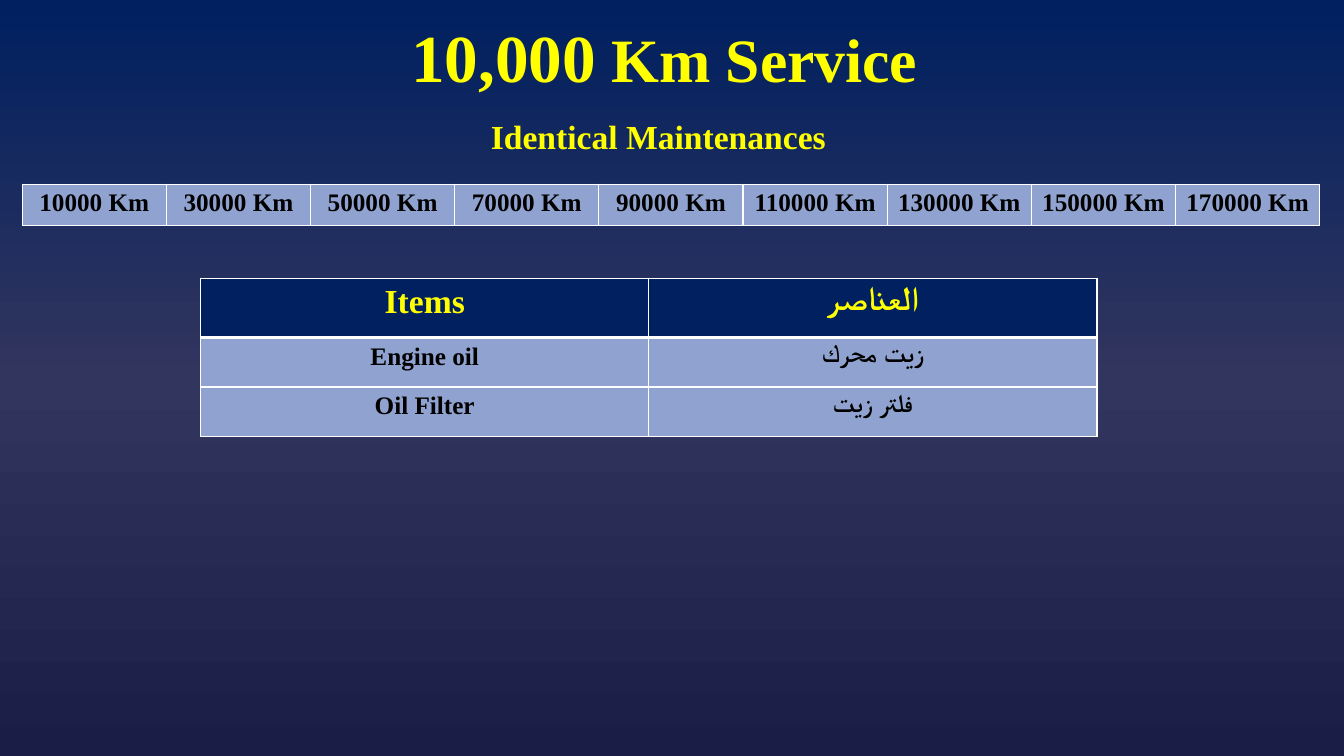
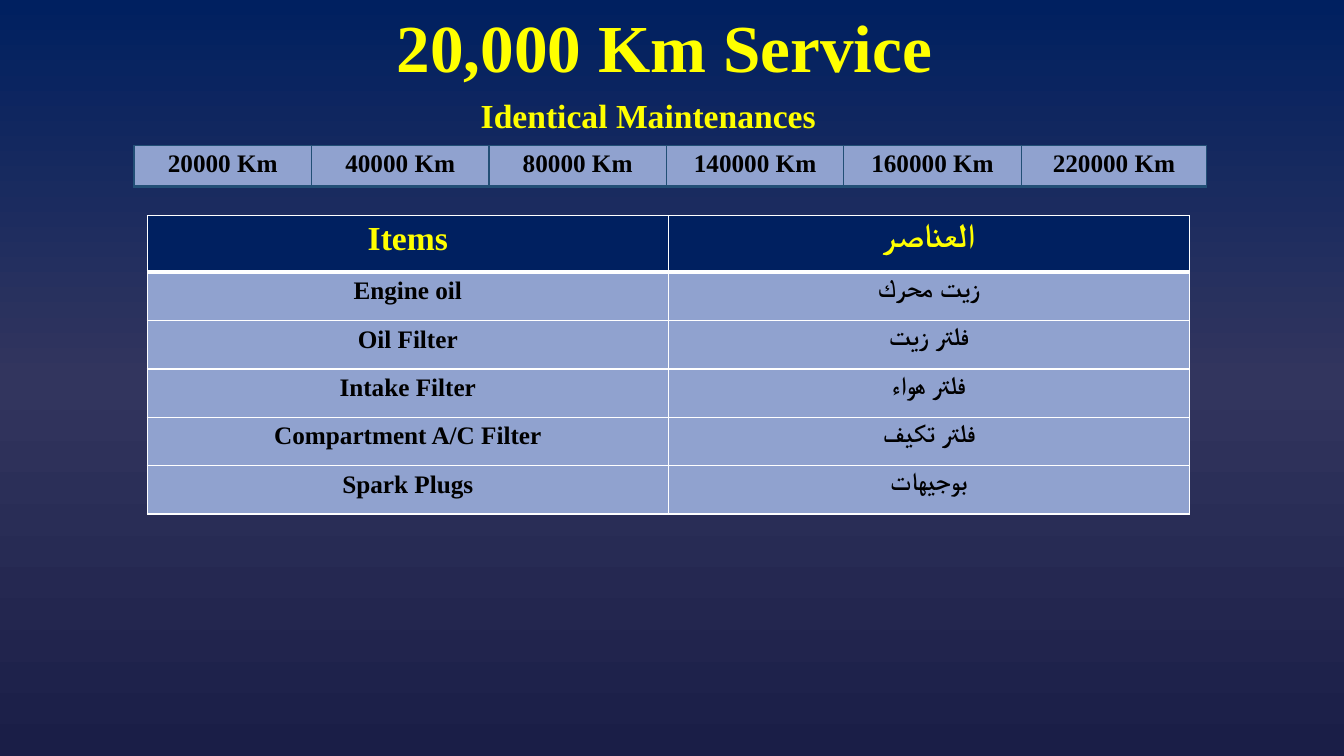
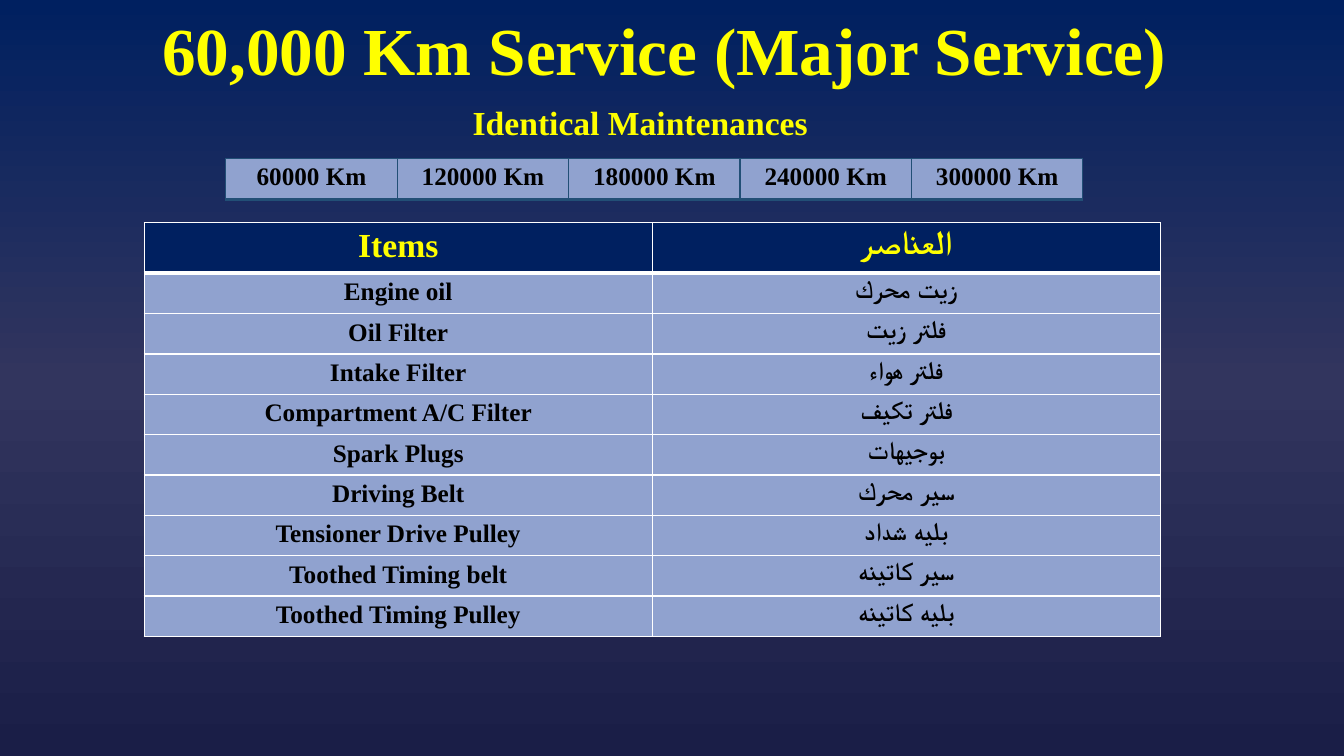
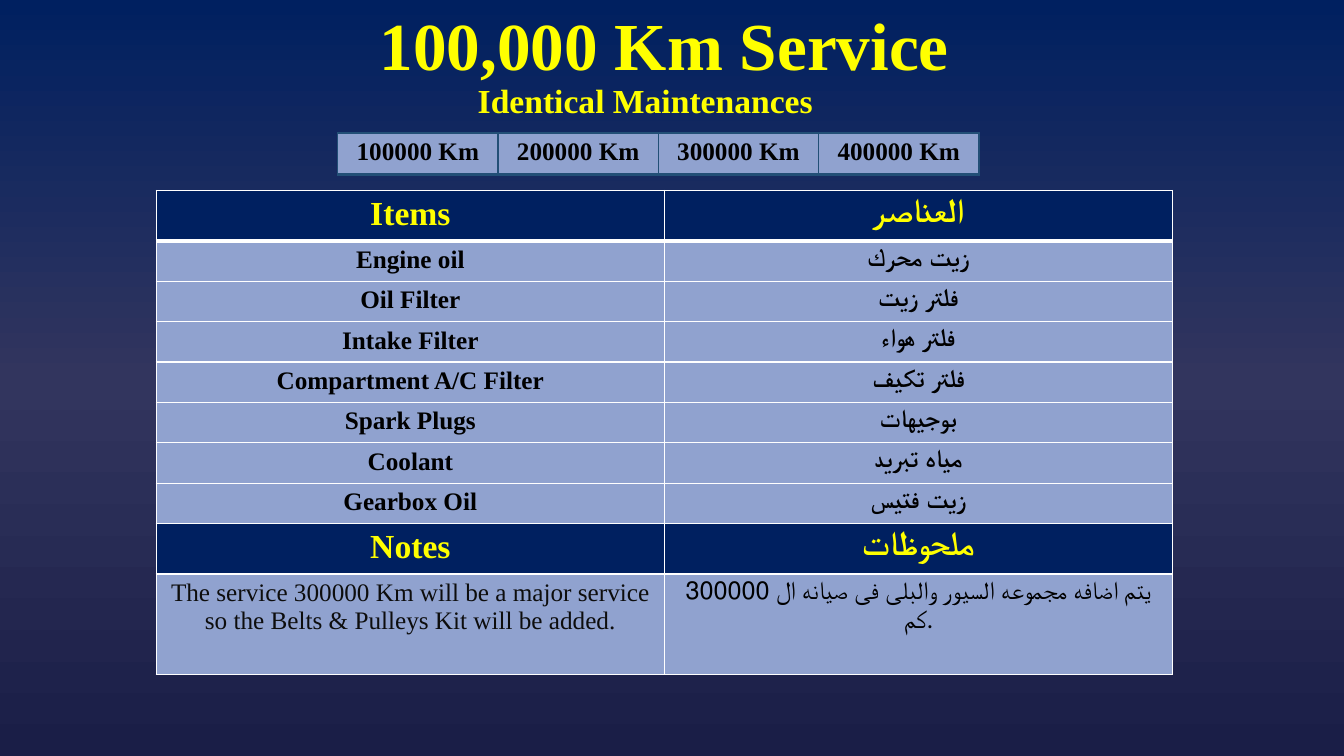
import copy

import pptx
import pptx.dml.color
import pptx.enum.text
import pptx.oxml.ns
import pptx.util
from lxml import etree

Inches = pptx.util.Inches
Pt = pptx.util.Pt
qn = pptx.oxml.ns.qn

COLORS = {
    "navy": "002060",
    "slate": "32355E",
    "midnight": "1A1E47",
    "yellow": "FFFF00",
    "cell": "90A2CF",
    "black": "000000",
    "ink": "0D0D0D",
    "white": "FFFFFF",
    "edge": "224F76",
}
SERIF = "Times New Roman"
SANS = "Calibri"

BASIC_PARTS = {"Engine oil": "زيت محرك", "Oil Filter": "فلتر زيت"}
FILTER_PARTS = {
    "Intake Filter": "فلتر هواء",
    "Compartment A/C Filter": "فلتر تكيف",
    "Spark Plugs": "بوجيهات",
}
FLUID_PARTS = {"Coolant": "مياه تبريد", "Gearbox Oil": "زيت فتيس"}
BELT_PARTS = {
    "Driving Belt": "سير محرك",
    "Tensioner Drive Pulley": "بليه شداد",
    "Toothed Timing belt": "سير كاتينه",
    "Toothed Timing Pulley": "بليه كاتينه",
}
MAJOR_NOTE = (
    "The service 300000 Km will be a major service so the Belts & Pulleys Kit will be added.",
    "يتم اضافه مجموعه السيور والبلى فى صيانه ال 300000 كم.",
)


def rgb(name):
    return pptx.dml.color.RGBColor.from_string(COLORS[name])


def style_paragraph(para, size, color, bold=True, font=SERIF):
    para.alignment = pptx.enum.text.PP_ALIGN.CENTER
    para.font.name = font
    para.font.size = Pt(size)
    para.font.bold = bold
    para.font.color.rgb = rgb(color)


def set_background(master):
    fill = master.background.fill
    fill.gradient()
    fill.gradient_angle = 270
    first_stop = next(master.element.iter(qn("a:gs")))
    first_stop.addnext(copy.deepcopy(first_stop))
    stops = zip(fill.gradient_stops, ("navy", "slate", "midnight"), (0, 0.5, 1))
    for stop, color, position in stops:
        stop.color.rgb = rgb(color)
        stop.position = position


def add_text_box(page, left, top, width, height):
    box = page.shapes.add_textbox(Inches(left), Inches(top), Inches(width), Inches(height))
    box.text_frame.word_wrap = True
    return box.text_frame


def add_title(page, height, number, rest, rest_size=48):
    frame = add_text_box(page, 0.84, 0.1, 11.5, height)
    frame.vertical_anchor = pptx.enum.text.MSO_ANCHOR.MIDDLE
    para = frame.paragraphs[0]
    style_paragraph(para, 48, "yellow")
    para.line_spacing = 0.9
    para.add_run().text = number
    span = para.add_run()
    span.text = rest
    if rest_size != 48:
        span.font.size = Pt(rest_size)


def add_subtitle(page, left, top):
    para = add_text_box(page, left, top, 5.46, 0.5).paragraphs[0]
    para.text = "Identical Maintenances"
    style_paragraph(para, 24, "yellow")


def add_border(cell, side, color, weight):
    properties = cell._tc.get_or_add_tcPr()
    line = etree.SubElement(properties, qn("a:ln" + side), w=str(Pt(weight)))
    fill = etree.SubElement(line, qn("a:solidFill"))
    etree.SubElement(fill, qn("a:srgbClr"), val=COLORS[color])


def fill_cell(cell, text, fill, edge, weights, **style):
    for side, weight in weights.items():
        add_border(cell, side, edge, weight)
    cell.fill.solid()
    cell.fill.fore_color.rgb = rgb(fill)
    para = cell.text_frame.paragraphs[0]
    para.text = text
    style_paragraph(para, **style)


def add_grid(page, left, top, widths, heights):
    frame = page.shapes.add_table(
        len(heights), len(widths), Inches(left), Inches(top),
        Inches(sum(widths)), Inches(sum(heights)),
    )
    table = frame.table
    table.first_row = False
    table.horz_banding = False
    for column, width in zip(table.columns, widths):
        column.width = Inches(width)
    for row, height in zip(table.rows, heights):
        row.height = Inches(height)
    return table


def add_schedule(page, left, top, widths, distances, edge="edge", bottom=2):
    table = add_grid(page, left, top, widths, [0.41])
    weights = {"L": 1, "R": 1, "T": 1, "B": bottom}
    for cell, distance in zip(table.rows[0].cells, distances):
        fill_cell(cell, f"{distance} Km", "cell", edge, weights, size=18, color="black")


def add_items(page, left, top, width, header_height, row_height, parts, note=None):
    heading = dict(size=24, color="yellow")
    rows = [(("Items", "العناصر"), "navy", header_height, (heading, heading))]
    for name, arabic in parts.items():
        english_style = dict(size=18, color="black")
        arabic_style = dict(english_style, font=SANS if name in BELT_PARTS else SERIF)
        rows.append(((name, arabic), "cell", row_height, (english_style, arabic_style)))
    if note:
        plain = dict(size=18, bold=False)
        rows.append((("Notes", "ملحوظات"), "navy", header_height, (heading, heading)))
        rows.append((note, "cell", 1, (
            dict(plain, color="ink"), dict(plain, color="black", font=SANS))))

    table = add_grid(page, left, top, [width / 2] * 2, [row[2] for row in rows])
    for index, (texts, fill, _, styles) in enumerate(rows):
        weights = {"L": 1, "R": 1}
        if index == 0:
            weights["T"] = 1
        weights["B"] = 3 if index == 0 else 1
        for cell, text, style in zip(table.rows[index].cells, texts, styles):
            fill_cell(cell, text, fill, "white", weights, **style)


def main():
    deck = pptx.Presentation()
    deck.slide_width = Inches(13.33)
    deck.slide_height = Inches(7.5)
    set_background(deck.slide_master)
    pages = [deck.slides.add_slide(deck.slide_layouts[6]) for _ in range(4)]
    standard_parts = BASIC_PARTS | FILTER_PARTS

    page = pages[0]
    add_title(page, 1, "10,000", " Km Service", rest_size=44)
    add_schedule(page, 0.22, 1.83, [1.43] * 9, range(10000, 180000, 20000), "white", 1)
    add_subtitle(page, 3.8, 1.1)
    add_items(page, 1.99, 2.76, 8.89, 0.59, 0.49, BASIC_PARTS)

    page = pages[1]
    add_title(page, 0.8, "20,000", " Km Service")
    add_schedule(page, 1.33, 1.44, [1.76] * 5 + [1.84],
                 (20000, 40000, 80000, 140000, 160000, 220000))
    add_subtitle(page, 3.7, 0.89)
    add_items(page, 1.46, 2.14, 10.34, 0.56, 0.48, standard_parts)

    page = pages[2]
    add_title(page, 0.86, "60,000", " Km Service (Major Service)")
    add_schedule(page, 2.24, 1.57, [1.7] * 5, range(60000, 360000, 60000))
    add_subtitle(page, 3.62, 0.96)
    add_items(page, 1.43, 2.21, 10.08, 0.5, 0.4, standard_parts | BELT_PARTS)

    page = pages[3]
    add_title(page, 0.76, "100,000", " Km Service")
    add_schedule(page, 3.35, 1.32, [1.59] * 4, range(100000, 500000, 100000))
    add_subtitle(page, 3.67, 0.74)
    add_items(page, 1.55, 1.89, 10.08, 0.5, 0.4, standard_parts | FLUID_PARTS, MAJOR_NOTE)

    deck.save("out.pptx")


if __name__ == "__main__":
    main()
